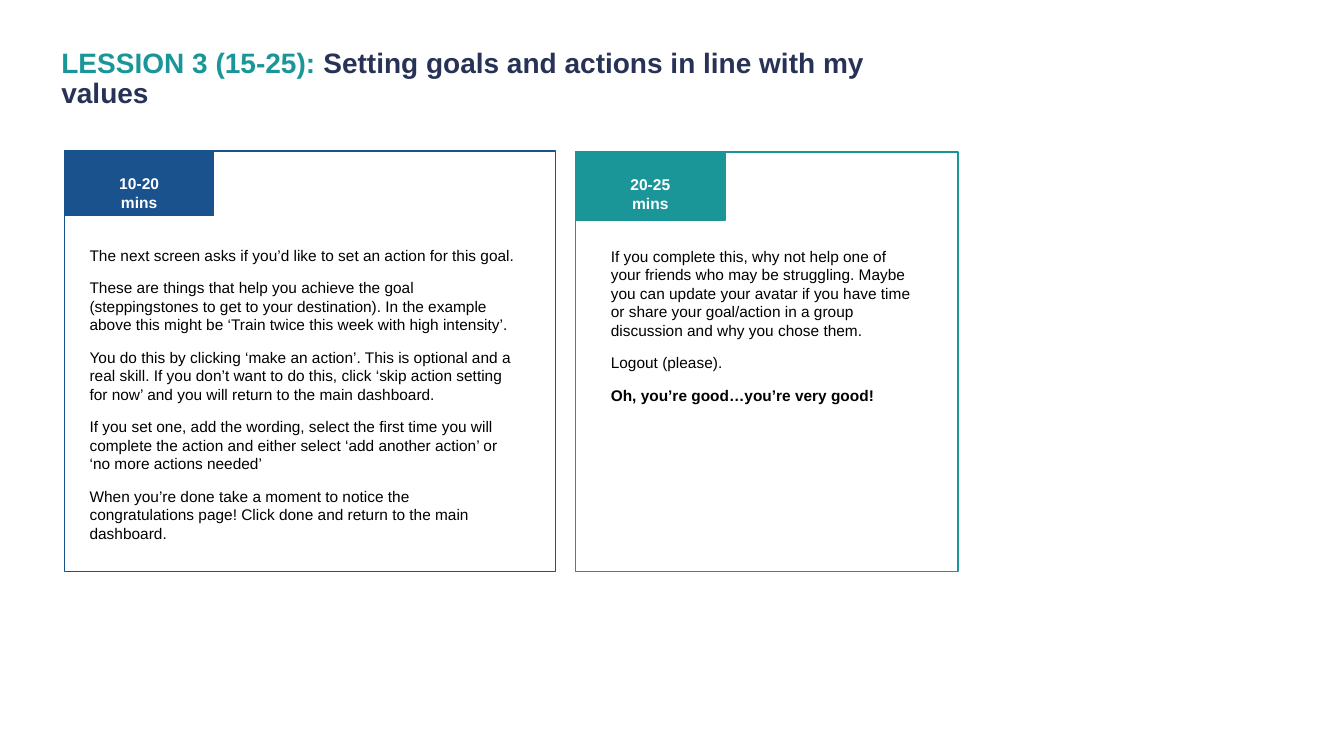
from dataclasses import dataclass

from pptx import Presentation
from pptx import util as u
from pptx.dml.color import RGBColor
from pptx.enum import shapes, text


@dataclass(frozen=True)
class Theme:
    font: str = "Arial"
    blue: str = "1A528D"
    teal: str = "1A9699"
    navy: str = "273256"
    black: str = "000000"
    white: str = "FFFFFF"
    title_size: float = 20
    label_size: float = 11.1
    body_size: float = 11
    paragraph_gap: float = 10
    border: float = 1


THEME = Theme()

ACTION_STEPS = [
    ("The next screen asks if you’d like to set an action for this goal.", False),
    ("These are things that help you achieve the goal (steppingstones to get to "
     "your destination). In the example above this might be ‘Train twice this "
     "week with high intensity’.", False),
    ("You do this by clicking ‘make an action’. This is optional and a real skill. "
     "If you don’t want to do this, click ‘skip action setting for now’ and you "
     "will return to the main dashboard.", False),
    ("If you set one, add the wording, select the first time you will complete the "
     "action and either select ‘add another action’ or ‘no more actions needed’", False),
    ("When you’re done take a moment to notice the congratulations page! Click done "
     "and return to the main dashboard.", False),
]
CLOSING_STEPS = [
    ("If you complete this, why not help one of your friends who may be struggling. "
     "Maybe you can update your avatar if you have time or share your goal/action "
     "in a group discussion and why you chose them.", False),
    ("Logout (please).", False),
    ("Oh, you’re good…you’re very good!", True),
]


def add_run(paragraph, wording, size, color, bold=False):
    run = paragraph.add_run()
    run.text = wording
    run.font.name = THEME.font
    run.font.size = u.Pt(size)
    run.font.bold = bold
    run.font.color.rgb = RGBColor.from_string(color)


def add_frame(slide, left, top, width, height):
    box = slide.shapes.add_textbox(*map(u.Inches, (left, top, width, height)))
    box.text_frame.word_wrap = True
    return box.text_frame


def add_rectangle(slide, left, top, width, height, color, filled):
    rectangle = slide.shapes.add_shape(
        shapes.MSO_SHAPE.RECTANGLE, *map(u.Inches, (left, top, width, height)))
    rectangle.shadow.inherit = False
    rectangle.line.color.rgb = RGBColor.from_string(color)
    rectangle.line.width = u.Pt(THEME.border)
    if filled:
        rectangle.fill.solid()
        rectangle.fill.fore_color.rgb = RGBColor.from_string(color)
    else:
        rectangle.fill.background()


def add_title(slide, left, top, width, height):
    frame = add_frame(slide, left, top, width, height)
    frame.vertical_anchor = text.MSO_ANCHOR.MIDDLE
    heading = frame.paragraphs[0]
    heading.line_spacing = 0.9
    add_run(heading, "LESSION 3 (15-25): ", THEME.title_size, THEME.teal, True)
    add_run(heading, "Setting goals and actions in line with my values",
            THEME.title_size, THEME.navy, True)


def add_time_panel(slide, left, top, width, height, color, tab_height,
                   minutes, steps, step_indent, step_width):
    # Time tab in the top left corner
    add_rectangle(slide, left, top, 1.48, tab_height, color, filled=True)
    label = add_frame(slide, left + 0.25, top + 0.18, 0.98, 0.31).paragraphs[0]
    label.alignment = text.PP_ALIGN.CENTER
    add_run(label, minutes, THEME.label_size, THEME.white, True)

    # Panel outline
    add_rectangle(slide, left, top, width, height, color, filled=False)

    # Instructions
    body = add_frame(slide, left + step_indent, top + 0.89, step_width, height - 1.2)
    for index, (step, bold) in enumerate(steps):
        paragraph = body.add_paragraph() if index else body.paragraphs[0]
        if index:
            paragraph.space_before = u.Pt(THEME.paragraph_gap)
        add_run(paragraph, step, THEME.body_size, THEME.black, bold)


def main():
    deck = Presentation()
    deck.slide_width, deck.slide_height = u.Inches(13.33), u.Inches(7.5)
    slide = deck.slides.add_slide(deck.slide_layouts[6])

    add_time_panel(slide, 0.64, 1.5, 4.87, 4.17, THEME.blue, 0.64,
                   "10-20 mins", ACTION_STEPS, 0.15, 4.42)
    add_time_panel(slide, 5.71, 1.51, 3.79, 4.16, THEME.teal, 0.68,
                   "20-25 mins", CLOSING_STEPS, 0.25, 3.18)
    add_title(slide, 0.51, 0.35, 8.72, 0.88)

    deck.save("out.pptx")


if __name__ == "__main__":
    main()
